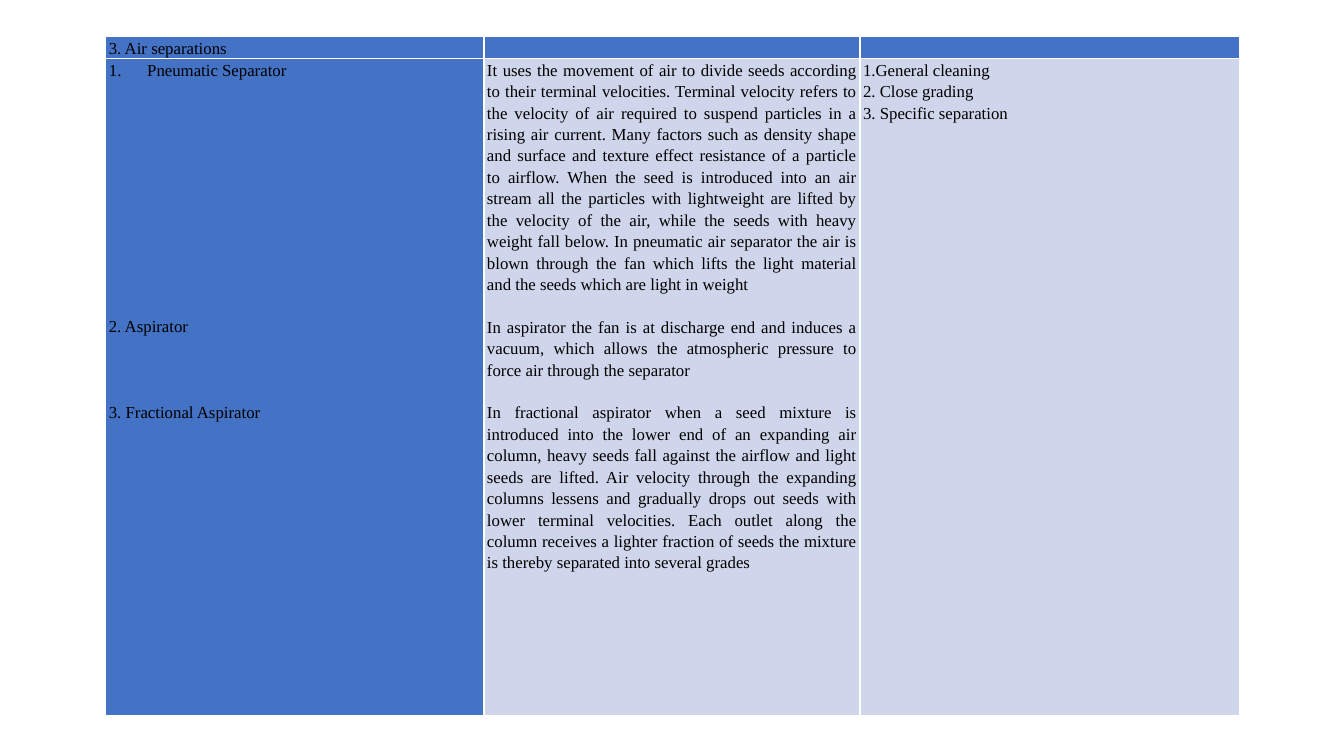
"""Build a slide with a table of air separation machines."""
from dataclasses import dataclass

from lxml import etree
from pptx import Presentation
from pptx import util as u
from pptx.dml import color
from pptx.enum import text as t
from pptx.oxml import ns

FONT, SIZE, LEAD = "Times New Roman", 12, 1.15
LINE = 15.28
BLUE, PALE, WHITE, BLACK = "4472C4", "CFD5EA", "FFFFFF", "000000"
WIDTHS = (3.75, 3.73, 3.76)
HEIGHTS = (0.22, 6.52)


@dataclass
class Para:
    text: str = ""
    gap: int = 0
    number: bool = False
    just: bool = False


@dataclass
class Box:
    fill: str
    paras: list[Para]


AIR = (
    "It uses the movement of air to divide seeds according to their terminal "
    "velocities. Terminal velocity refers to the velocity of air required to "
    "suspend particles in a rising air current. Many factors such as density "
    "shape and surface and texture effect resistance of a particle to airflow. "
    "When the seed is introduced into an air stream all the particles with "
    "lightweight are lifted by the velocity of the air, while the seeds with "
    "heavy weight fall below. In pneumatic air separator the air is blown "
    "through the fan which lifts the light material and the seeds which are "
    "light in weight"
)
FAN = (
    "In aspirator the fan is at discharge end and induces a vacuum, which "
    "allows the atmospheric pressure to force air through the separator"
)
COLUMN = (
    "In fractional aspirator when a seed mixture is introduced into the lower "
    "end of an expanding air column, heavy seeds fall against the airflow and "
    "light seeds are lifted. Air velocity through the expanding columns lessens "
    "and gradually drops out seeds with lower terminal velocities. Each outlet "
    "along the column receives a lighter fraction of seeds the mixture is "
    "thereby separated into several grades"
)
USES = ("1.General cleaning", "2. Close grading", "3. Specific separation")

ROWS = [
    [Box(BLUE, [Para("3. Air separations")]), Box(BLUE, [Para()]), Box(BLUE, [Para()])],
    [
        Box(BLUE, [
            Para("Pneumatic Separator", number=True),
            Para("2. Aspirator", gap=11),
            Para("3. Fractional Aspirator", gap=3),
        ]),
        Box(PALE, [
            Para(AIR, just=True),
            Para(FAN, gap=1, just=True),
            Para(COLUMN, gap=1, just=True),
        ]),
        Box(PALE, [Para(use) for use in USES]),
    ],
]


def rgb(code: str) -> color.RGBColor:
    """Turn a hex string into a colour."""
    return color.RGBColor.from_string(code)


def write(para, text: str, *, gap: int = 0, number: bool = False, just: bool = False) -> None:
    """Put formatted text in a paragraph."""
    para.line_spacing = LEAD
    para.alignment = t.PP_ALIGN.JUSTIFY if just else t.PP_ALIGN.LEFT
    if gap:
        para.space_before = u.Pt(gap * LINE)
    if number:
        props = para._p.get_or_add_pPr()
        props.set("marL", str(u.Inches(0.38)))
        props.set("indent", str(-u.Inches(0.38)))
        etree.SubElement(props, ns.qn("a:buFont"), typeface="+mj-lt")
        etree.SubElement(props, ns.qn("a:buAutoNum"), type="arabicPeriod")
    if not text:
        para._p.get_or_add_endParaRPr().set("sz", str(SIZE * 100))
        return
    run = para.add_run()
    run.text = text
    run.font.name = FONT
    run.font.size = u.Pt(SIZE)
    run.font.bold = False
    run.font.color.rgb = rgb(BLACK)


def edge(cell) -> None:
    """Give a cell thin white borders."""
    props = cell._tc.get_or_add_tcPr()
    for side in ("lnL", "lnR", "lnT", "lnB"):
        line = etree.SubElement(props, ns.qn(f"a:{side}"), w=str(u.Pt(1)))
        fill = etree.SubElement(line, ns.qn("a:solidFill"))
        etree.SubElement(fill, ns.qn("a:srgbClr"), val=WHITE)


def draw(cell, box: Box) -> None:
    """Fill one table cell from its description."""
    cell.margin_left = cell.margin_right = u.Inches(0.03)
    cell.margin_top = cell.margin_bottom = 0
    edge(cell)
    cell.fill.solid()
    cell.fill.fore_color.rgb = rgb(box.fill)
    frame = cell.text_frame
    for i, item in enumerate(box.paras):
        para = frame.add_paragraph() if i else frame.paragraphs[0]
        write(para, item.text, gap=item.gap, number=item.number, just=item.just)


def main() -> None:
    """Create the slide and save it."""
    deck = Presentation()
    deck.slide_width, deck.slide_height = u.Inches(13.33), u.Inches(7.5)
    slide = deck.slides.add_slide(deck.slide_layouts[6])
    table = slide.shapes.add_table(
        len(HEIGHTS), len(WIDTHS), u.Inches(1.05), u.Inches(0.36),
        u.Inches(sum(WIDTHS)), u.Inches(sum(HEIGHTS)),
    ).table
    table.first_row = table.horz_banding = False
    for col, width in zip(table.columns, WIDTHS):
        col.width = u.Inches(width)
    for row, height, boxes in zip(table.rows, HEIGHTS, ROWS):
        row.height = u.Inches(height)
        for cell, box in zip(row.cells, boxes):
            draw(cell, box)
    deck.save("out.pptx")


if __name__ == "__main__":
    main()
